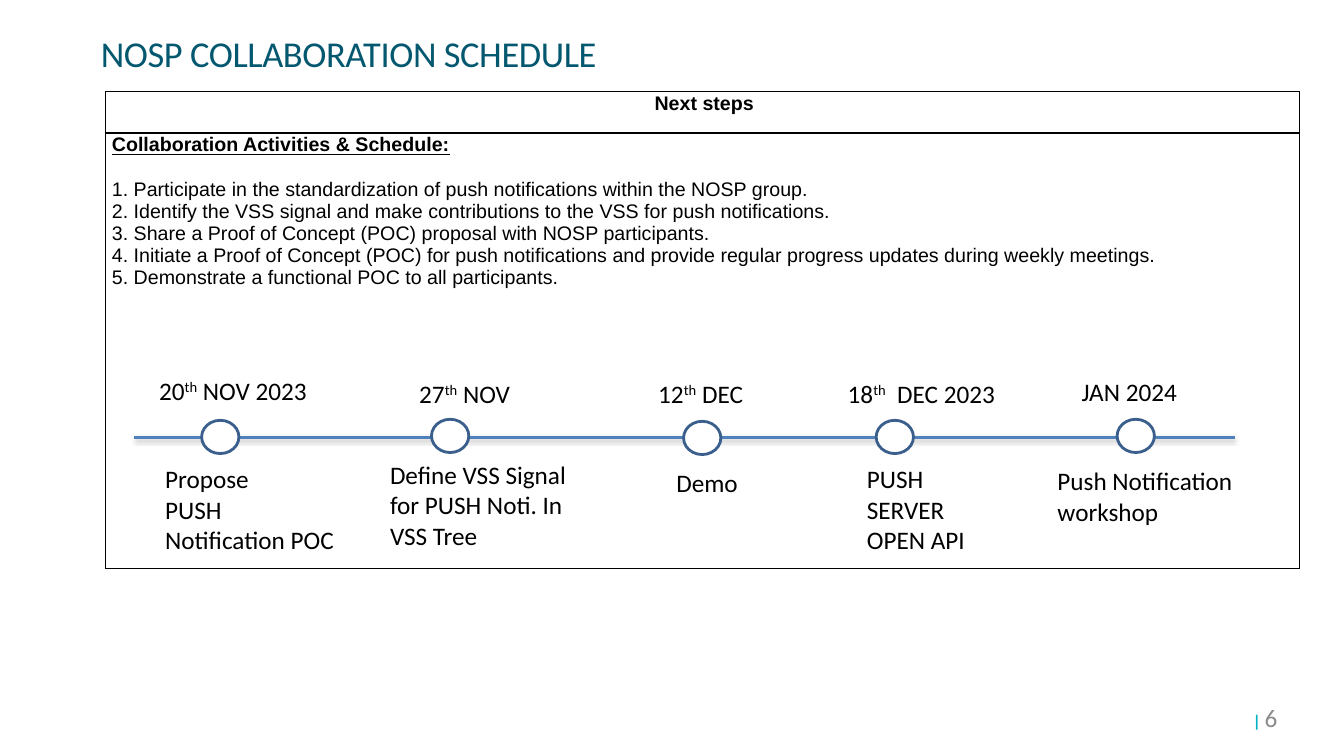
from dataclasses import dataclass

from lxml import etree
from pptx import Presentation
from pptx import util as u
from pptx.dml.color import RGBColor
from pptx.enum import shapes, text
from pptx.oxml import ns


@dataclass(frozen=True)
class Theme:
    ink: str = "000000"
    paper: str = "FFFFFF"
    heading: str = "03586F"
    accent: str = "00B1C3"
    muted: str = "8C8C8C"
    axis: str = "4F81BD"
    ring: str = "3A5F8C"
    sans: str = "Calibri"
    table_font: str = "Arial"
    title_size: int = 26
    label_size: int = 18
    table_size: int = 14
    mark_size: int = 12


THEME = Theme()
PAD = (0.1, 0.05, 0.1, 0.05)

ACTIVITIES = (
    "Participate in the standardization of push notifications within the NOSP group.",
    "Identify the VSS signal and make contributions to the VSS for push notifications.",
    "Share a Proof of Concept (POC) proposal with NOSP participants.",
    "Initiate a Proof of Concept (POC) for push notifications and provide regular "
    "progress updates during weekly meetings.",
    "Demonstrate a functional POC to all participants.",
)

# Ring (left, top), date (parts, box), task (paragraphs, box);
# the middle part of a date is its raised ordinal
MILESTONES = (
    ((2.0, 4.17), ("20", "th", " NOV 2023"), (1.48, 3.67, 2.05, 0.4),
     ("Propose", "PUSH", "Notification POC"), (1.54, 4.55, 4, 1.01)),
    ((4.28, 4.16), ("27", "th", " NOV"), (4.06, 3.7, 2.33, 0.4),
     ("Define VSS Signal for PUSH Noti. In VSS Tree",), (3.77, 4.51, 2, 1.01)),
    ((6.78, 4.18), ("12", "th", " DEC"), (6.43, 3.7, 1.53, 0.4),
     ("Demo",), (6.61, 4.59, 1.89, 0.4)),
    ((8.69, 4.17), ("18", "th", "  DEC 2023"), (8.31, 3.7, 1.86, 0.4),
     ("PUSH SERVER OPEN API",), (8.5, 4.55, 1.47, 1.01)),
    ((11.08, 4.16), ("JAN 2024",), (10.63, 3.68, 1.96, 0.4),
     ("Push Notification workshop",), (10.39, 4.57, 2.17, 0.71)),
)


def rgb(color):
    return RGBColor.from_string(color)


def inches(box):
    return [u.Inches(length) for length in box]


def add_run(paragraph, words, size, color, font=THEME.sans, bold=False):
    run = paragraph.add_run()
    run.text = words
    run.font.size = u.Pt(size)
    run.font.name = font
    run.font.bold = bold
    run.font.color.rgb = rgb(color)
    return run


def add_frame(slide, box, pad=PAD):
    frame = slide.shapes.add_textbox(*inches(box)).text_frame
    frame.word_wrap = True
    (frame.margin_left, frame.margin_top,
     frame.margin_right, frame.margin_bottom) = inches(pad)
    return frame


def add_paragraph(frame, index):
    return frame.paragraphs[0] if index == 0 else frame.add_paragraph()


def add_title(slide, box):
    title = add_frame(slide, box, (0.01, 0.01, 0, 0)).paragraphs[0]
    title.space_before = u.Pt(1)
    run = add_run(title, "NOSP COLLABORATION SCHEDULE", THEME.title_size, THEME.heading)
    run.font._element.set("spc", "-30")


def add_page_number(slide, box):
    number = add_frame(slide, box, (0, 0, 0, 0)).paragraphs[0]
    number.alignment = text.PP_ALIGN.RIGHT
    add_run(number, "| ", THEME.mark_size, THEME.accent, bold=True)
    add_run(number, "6", THEME.label_size, THEME.muted)


def style_cell(cell):
    cell.margin_left, cell.margin_top, cell.margin_right, cell.margin_bottom = inches(
        (0.06, 0.01, 0.03, 0))
    # Borders come before the fill in the cell properties
    properties = cell._tc.get_or_add_tcPr()
    for side in ("lnL", "lnR", "lnT", "lnB"):
        border = etree.SubElement(properties, ns.qn(f"a:{side}"), w=str(u.Pt(1)))
        fill = etree.SubElement(border, ns.qn("a:solidFill"))
        etree.SubElement(fill, ns.qn("a:srgbClr"), val=THEME.ink)
    cell.fill.solid()
    cell.fill.fore_color.rgb = rgb(THEME.paper)


def add_next_steps(slide, box, header_height):
    table = slide.shapes.add_table(2, 1, *inches(box)).table
    table.first_row = table.horz_banding = False
    table.rows[0].height = u.Inches(header_height)
    table.rows[1].height = u.Inches(box[3] - header_height)
    header, body = table.cell(0, 0), table.cell(1, 0)
    for cell in (header, body):
        style_cell(cell)

    heading = header.text_frame.paragraphs[0]
    heading.alignment = text.PP_ALIGN.CENTER
    add_run(heading, "Next steps", THEME.table_size, THEME.ink, THEME.table_font, True)

    subject = add_run(body.text_frame.paragraphs[0], "Collaboration Activities & Schedule:",
                      THEME.table_size, THEME.ink, THEME.table_font, True)
    subject.font.underline = True
    for number, activity in enumerate(ACTIVITIES, 1):
        step = body.text_frame.add_paragraph()
        if number == 1:
            step.space_before = u.Pt(16)
        add_run(step, f"{number}. {activity}", THEME.table_size, THEME.ink, THEME.table_font)


def add_axis(slide, left, right, y):
    axis = slide.shapes.add_connector(
        shapes.MSO_CONNECTOR.STRAIGHT, *inches((left, y, right, y)))
    axis.line.color.rgb = rgb(THEME.axis)
    axis.line.width = u.Pt(2)
    # Soft shadow straight below the line
    effects = etree.SubElement(axis._element.spPr, ns.qn("a:effectLst"))
    shadow = etree.SubElement(effects, ns.qn("a:outerShdw"), blurRad="40000",
                              dist="20000", dir="5400000", rotWithShape="0")
    tint = etree.SubElement(shadow, ns.qn("a:srgbClr"), val=THEME.ink)
    etree.SubElement(tint, ns.qn("a:alpha"), val="38000")


def add_milestone(slide, ring_at, date, date_box, task, task_box):
    ring = slide.shapes.add_shape(
        shapes.MSO_SHAPE.OVAL, *inches((*ring_at, 0.37, 0.33)))
    ring.shadow.inherit = False
    ring.fill.solid()
    ring.fill.fore_color.rgb = rgb(THEME.paper)
    ring.line.color.rgb = rgb(THEME.ring)
    ring.line.width = u.Pt(2)

    date_line = add_frame(slide, date_box).paragraphs[0]
    for index, part in enumerate(date):
        run = add_run(date_line, part, THEME.label_size, THEME.ink)
        if index == 1:
            run.font._element.set("baseline", "30000")

    task_frame = add_frame(slide, task_box)
    for index, words in enumerate(task):
        add_run(add_paragraph(task_frame, index), words, THEME.label_size, THEME.ink)


def add_timeline(slide):
    add_axis(slide, 1.33, 12.25, 4.34)
    for milestone in MILESTONES:
        add_milestone(slide, *milestone)


def main():
    deck = Presentation()
    deck.slide_width, deck.slide_height = inches((13.33, 7.5))
    slide = deck.slides.add_slide(deck.slide_layouts[6])
    add_page_number(slide, (9.6, 6.97, 3.07, 0.38))
    add_next_steps(slide, (1.05, 0.91, 11.84, 4.73), 0.41)
    add_title(slide, (0.99, 0.3, 8.98, 0.47))
    add_timeline(slide)
    deck.save("out.pptx")


if __name__ == "__main__":
    main()
